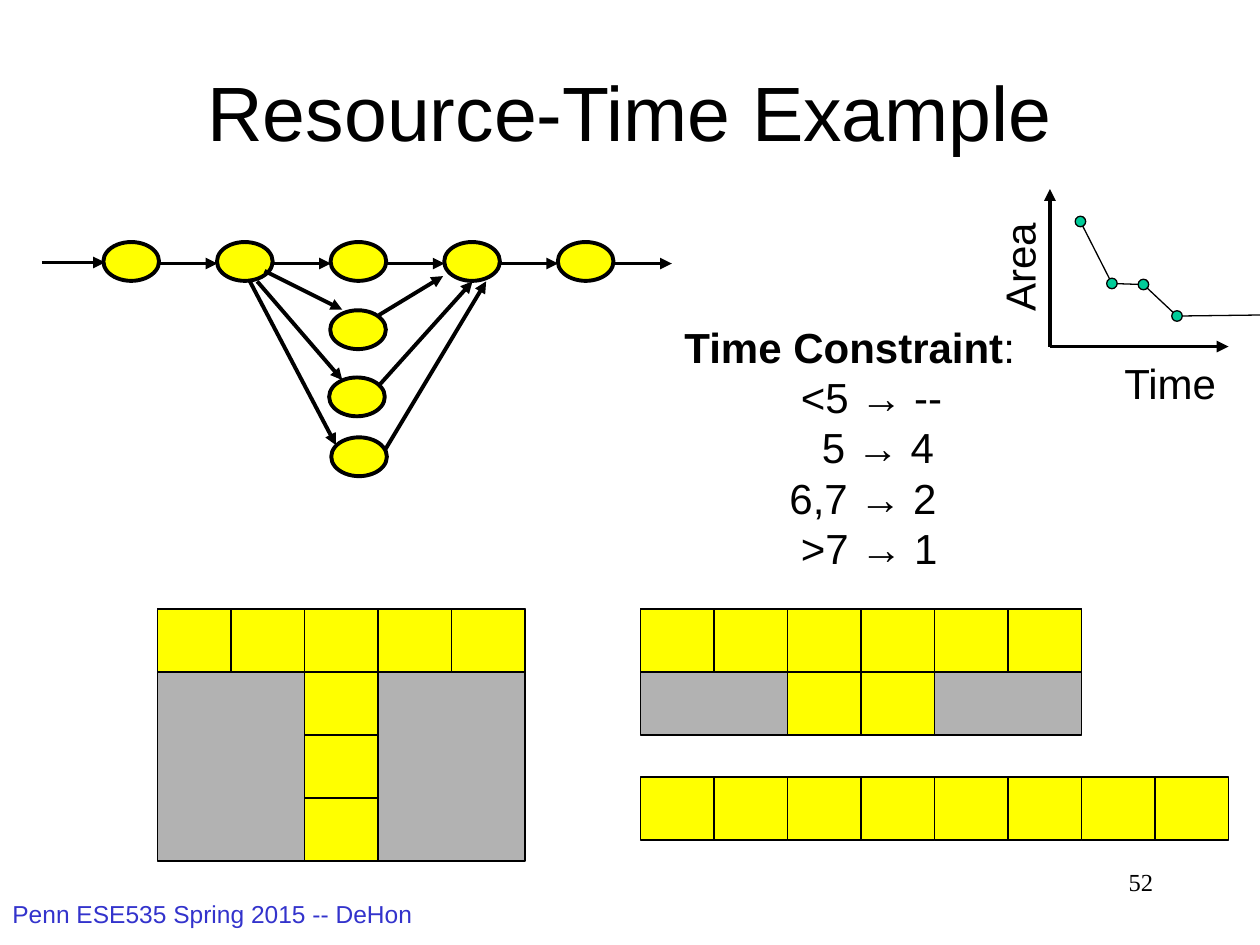
from dataclasses import dataclass
from itertools import pairwise
from typing import Optional

from lxml.etree import SubElement
from pptx import Presentation
from pptx.dml.color import RGBColor
from pptx.enum.shapes import MSO_CONNECTOR as Connector, MSO_SHAPE as Shape
from pptx.enum.text import MSO_ANCHOR as Anchor, PP_ALIGN as Align
from pptx.oxml.ns import qn
from pptx.util import Emu, Inches, Pt

COLUMNS, ROWS = 120, 90
CELL_W, CELL_H = 7, 6
NODE_W, NODE_H = 5.3, 3.7
MARKER = 1
THIN, THICK = 0.75, 2.25
BLACK, YELLOW, GRAY, TEAL, BLUE = "000000", "FFFF00", "B2B2B2", "00CC99", "3333CC"

Point = tuple[float, float]


@dataclass(frozen=True)
class Box:
    left: float
    top: float
    width: float
    height: float


@dataclass(frozen=True)
class Label:
    text: str
    box: Box
    size: int = 24
    font: str = "Arial"
    color: str = BLACK
    align: Align = Align.LEFT
    rotation: int = 0
    wrap: bool = False


@dataclass(frozen=True)
class Schedule:
    left: int
    top: int
    steps: int
    extra_cells: tuple[Point, ...] = ()
    resources: int = 1


@dataclass(frozen=True)
class Constraint:
    text: str
    indent: float


deck = Presentation()
deck.slide_width, deck.slide_height = Inches(10), Inches(7.5)
slide = deck.slides.add_slide(deck.slide_layouts[5])
shapes = slide.shapes


def x(columns: float) -> Emu:
    return Emu(round(deck.slide_width * columns / COLUMNS))


def y(rows: float) -> Emu:
    return Emu(round(deck.slide_height * rows / ROWS))


def rgb(color: str) -> RGBColor:
    return RGBColor.from_string(color)


def frame(box: Box) -> tuple[Emu, Emu, Emu, Emu]:
    return x(box.left), y(box.top), x(box.width), y(box.height)


def add_run(paragraph, text: str, size: int = 24, font: str = "Arial",
            color: str = BLACK, bold: bool = False) -> None:
    run = paragraph.add_run()
    run.text = text
    run.font.size, run.font.name, run.font.bold = Pt(size), font, bold
    run.font.color.rgb = rgb(color)


def add_figure(kind: Shape, box: Box, fill: str, weight: float = THIN) -> None:
    figure = shapes.add_shape(kind, *frame(box))
    figure.shadow.inherit = False
    figure.fill.solid()
    figure.fill.fore_color.rgb = rgb(fill)
    figure.line.color.rgb = rgb(BLACK)
    figure.line.width = Pt(weight)


def add_ellipse(center: Point, width: float, height: float, fill: str, weight: float) -> None:
    box = Box(center[0] - width / 2, center[1] - height / 2, width, height)
    add_figure(Shape.OVAL, box, fill, weight)


def add_line(start: Point, end: Point, weight: float = THICK,
             head: Optional[str] = "triangle") -> None:
    line = shapes.add_connector(Connector.STRAIGHT, x(start[0]), y(start[1]), x(end[0]), y(end[1]))
    line.line.color.rgb = rgb(BLACK)
    line.line.width = Pt(weight)
    if head:
        SubElement(line.line._get_or_add_ln(), qn("a:tailEnd"), type=head)
    SubElement(line._element.spPr, qn("a:effectLst"))


def add_label(label: Label) -> None:
    text_box = shapes.add_textbox(*frame(label.box))
    text_box.rotation = label.rotation
    text_box.text_frame.word_wrap = label.wrap
    paragraph = text_box.text_frame.paragraphs[0]
    paragraph.alignment = label.align
    add_run(paragraph, label.text, label.size, label.font, label.color)


def add_schedule(schedule: Schedule) -> None:
    if schedule.resources > 1:
        idle = Box(schedule.left, schedule.top,
                   schedule.steps * CELL_W, schedule.resources * CELL_H)
        add_figure(Shape.RECTANGLE, idle, GRAY)
    first_row = tuple((step, 0) for step in range(schedule.steps))
    for step, resource in first_row + schedule.extra_cells:
        cell = Box(schedule.left + step * CELL_W, schedule.top + resource * CELL_H, CELL_W, CELL_H)
        add_figure(Shape.RECTANGLE, cell, YELLOW)


def add_constraints(box: Box, constraints: list[Constraint]) -> None:
    text_frame = shapes.add_textbox(*frame(box)).text_frame
    text_frame.word_wrap = False
    heading = text_frame.paragraphs[0]
    add_run(heading, "Time Constraint", bold=True)
    add_run(heading, ":")
    for constraint in constraints:
        paragraph = text_frame.add_paragraph()
        paragraph._p.get_or_add_pPr().set("marL", str(x(constraint.indent)))
        add_run(paragraph, constraint.text)


title = shapes.title
title.left, title.top, title.width, title.height = frame(Box(9, 3, 102, 15))
title.text_frame.vertical_anchor = Anchor.MIDDLE
title_line = title.text_frame.paragraphs[0]
title_line.alignment = Align.CENTER
add_run(title_line, "Resource-Time Example", 44)

chain = [(12.5 + 10.82 * step, 24.9) for step in range(5)]
parallel = [(34.1, 31.4), (34, 37.8), (34.2, 43.5)]
for node in chain + parallel:
    add_ellipse(node, NODE_W, NODE_H, YELLOW, THICK)
add_line((4, 25), (10, 25))
for node_x, node_y in chain:
    add_line((node_x + 2.7, node_y + 0.2), (node_x + 8.2, node_y + 0.2))

fan_out = [((25.2, 25.8), (32.6, 29.5)), ((24.5, 26.8), (32.6, 36.2)), ((23.8, 26.8), (32, 42.4))]
fan_in = [((36.1, 30), (42.2, 26.3)), ((36.1, 36.7), (45, 26.8)), ((36.7, 42.8), (46.3, 26.8))]
for start, end in fan_out + fan_in:
    add_line(start, end)

for schedule in (
    Schedule(15, 58, 5, ((2, 1), (2, 2), (2, 3)), 4),
    Schedule(61, 58, 6, ((2, 1), (3, 1)), 2),
    Schedule(61, 74, 8),
):
    add_schedule(schedule)

add_constraints(Box(64, 30, 34, 25.2), [
    Constraint("<5 → --", 11.1),
    Constraint("5 → 4", 13.1),
    Constraint("6,7 → 2", 10),
    Constraint(">7 → 1", 11.1),
])

origin = (100, 33)
for axis_end in ((100, 18), (117, 33)):
    add_line(origin, axis_end)
tradeoff = [(102.9, 21.1), (105.9, 27), (108.9, 27.1), (112.1, 30.1)]
for start, end in pairwise(tradeoff + [(COLUMNS, 30)]):
    add_line(start, end, THIN, None)
for design in tradeoff:
    add_ellipse(design, MARKER, MARKER, TEAL, THIN)

for label in (
    Label("Time", Box(105.9, 33.5, 11.3, 6)),
    Label("Area", Box(91.6, 22.4, 10.9, 6), rotation=270),
    Label("Penn ESE535 Spring 2015 -- DeHon", Box(0, 85, 46, 5), 14, color=BLUE, wrap=True),
    Label("52", Box(86, 82, 25, 6), 14, "Times New Roman", align=Align.RIGHT, wrap=True),
):
    add_label(label)

deck.save("out.pptx")
